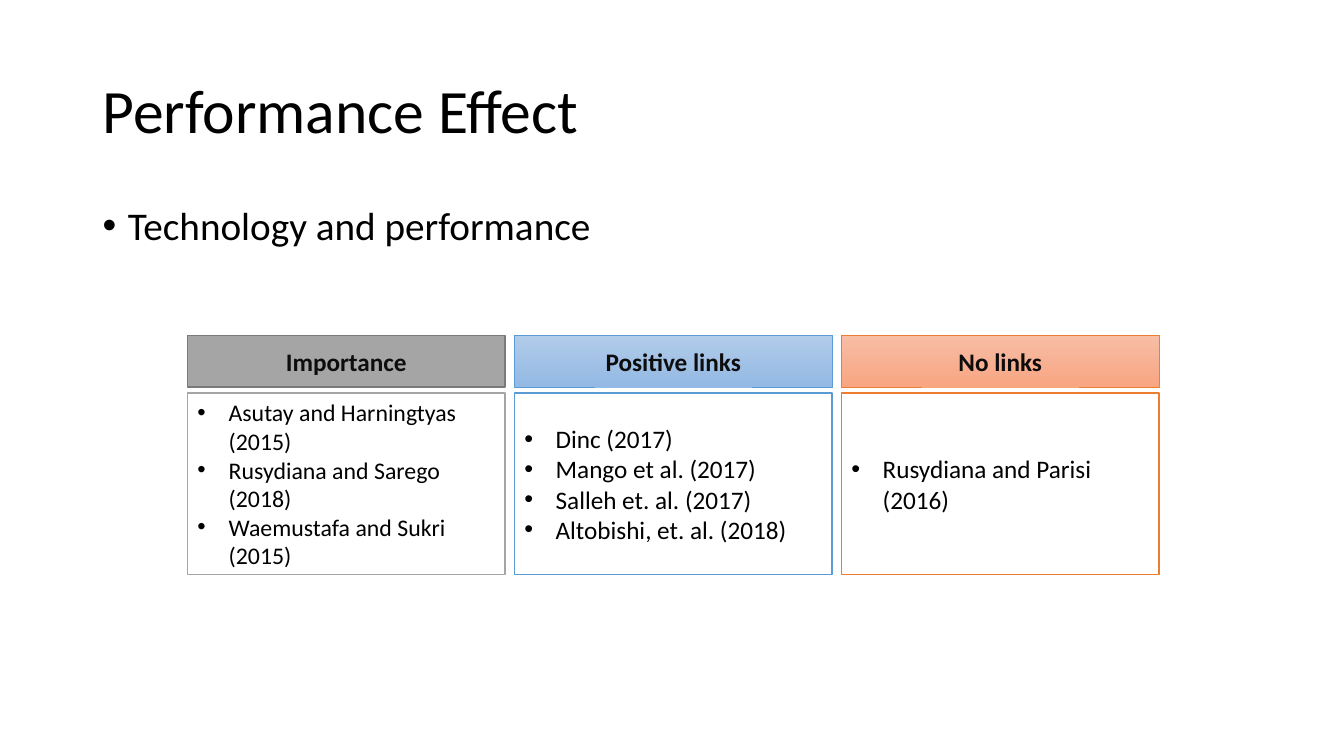
from lxml.etree import SubElement
from pptx import Presentation
from pptx.dml.color import RGBColor
from pptx.enum.shapes import MSO_SHAPE
from pptx.enum.text import MSO_ANCHOR as Anchor, PP_ALIGN as Align
from pptx.oxml.ns import qn
from pptx.util import Inches, Pt

BLACK = RGBColor(0x00, 0x00, 0x00)
INK = RGBColor(0x0D, 0x0D, 0x0D)
WHITE = RGBColor(0xFF, 0xFF, 0xFF)
GRAY = RGBColor(0xA5, 0xA5, 0xA5)
DARK_GRAY = RGBColor(0x7A, 0x7A, 0x7A)
BLUE = RGBColor(0x5B, 0x9B, 0xD5)
BLUE_TOP = RGBColor(0xB1, 0xCB, 0xE9)
BLUE_BOTTOM = RGBColor(0x93, 0xB9, 0xE4)
ORANGE = RGBColor(0xED, 0x7D, 0x31)
ORANGE_TOP = RGBColor(0xF7, 0xBD, 0xA5)
ORANGE_BOTTOM = RGBColor(0xF8, 0xA5, 0x82)

GRID_LEFT, COLUMN_STEP, COLUMN_WIDTH = 13.95, 24.33, 23.63
HEADER_ROW = (44.4, 6.8)
STUDY_ROW = (52, 24)
TITLE_AREA = (6.9, 5.33, 86.25, 19.33)
BODY_AREA = (6.9, 26.67, 86.25, 63.47)

GROUPS = [
    ("Importance", [GRAY], DARK_GRAY, 1, GRAY, 17,
     ["Asutay and Harningtyas (2015)", "Rusydiana and Sarego (2018)",
      "Waemustafa and Sukri (2015)"]),
    ("Positive links", [BLUE_TOP, BLUE_BOTTOM], BLUE, 0.5, BLUE, 18,
     ["Dinc (2017)", "Mango et al. (2017)", "Salleh et. al. (2017)",
      "Altobishi, et. al. (2018)"]),
    ("No links", [ORANGE_TOP, ORANGE_BOTTOM], ORANGE, 0.5, ORANGE, 18,
     ["Rusydiana and Parisi (2016)"]),
]


def write(shape, lines, size, color=BLACK, bold=False, align=Align.LEFT,
          anchor=Anchor.MIDDLE, spacing=1, indent=None):
    frame = shape.text_frame
    frame.word_wrap = True
    frame.vertical_anchor = anchor
    for index, line in enumerate(lines):
        paragraph = frame.add_paragraph() if index else frame.paragraphs[0]
        paragraph.text = line
        paragraph.alignment = align
        paragraph.line_spacing = spacing
        if indent:
            properties = paragraph._p.get_or_add_pPr()
            properties.set("marL", str(Inches(indent)))
            properties.set("indent", str(-Inches(indent)))
            SubElement(properties, qn("a:buFont"), typeface="Arial")
            SubElement(properties, qn("a:buChar"), char="•")
        font = paragraph.runs[0].font
        font.name = "Calibri"
        font.size = Pt(size)
        font.bold = bold
        font.color.rgb = color


class SlideBuilder:
    def __init__(self, presentation):
        self.width = presentation.slide_width
        self.height = presentation.slide_height
        self.slide = presentation.slides.add_slide(presentation.slide_layouts[6])

    def area(self, left, top, width, height):
        return (int(left * self.width / 100), int(top * self.height / 100),
                int(width * self.width / 100), int(height * self.height / 100))

    def text(self, area, lines, size, **style):
        box = self.slide.shapes.add_textbox(*self.area(*area))
        write(box, lines, size, **style)

    def card(self, column, row, colors, line_color, line_width, lines, size, **style):
        top, height = row
        left = GRID_LEFT + column * COLUMN_STEP
        shape = self.slide.shapes.add_shape(
            MSO_SHAPE.RECTANGLE, *self.area(left, top, COLUMN_WIDTH, height))
        shape.shadow.inherit = False
        if len(colors) == 1:
            shape.fill.solid()
            shape.fill.fore_color.rgb = colors[0]
        else:
            shape.fill.gradient()
            shape.fill.gradient_angle = 270
            for stop, color in zip(shape.fill.gradient_stops, colors):
                stop.color.rgb = color
        shape.line.color.rgb = line_color
        shape.line.width = Pt(line_width)
        write(shape, lines, size, **style)


def main():
    presentation = Presentation()
    presentation.slide_width = Inches(13.33)
    presentation.slide_height = Inches(7.5)
    builder = SlideBuilder(presentation)
    builder.text(TITLE_AREA, ["Performance Effect"], 44, spacing=0.9)
    builder.text(BODY_AREA, ["Technology and performance"], 28,
                 anchor=Anchor.TOP, spacing=0.9, indent=0.25)
    for column, (heading, colors, border, border_width, frame_color, size,
                 studies) in enumerate(GROUPS):
        builder.card(column, HEADER_ROW, colors, border, border_width,
                     [heading], 18, color=INK, bold=True, align=Align.CENTER)
        builder.card(column, STUDY_ROW, [WHITE], frame_color, 1,
                     studies, size, indent=0.31)
    presentation.save("out.pptx")


if __name__ == "__main__":
    main()
